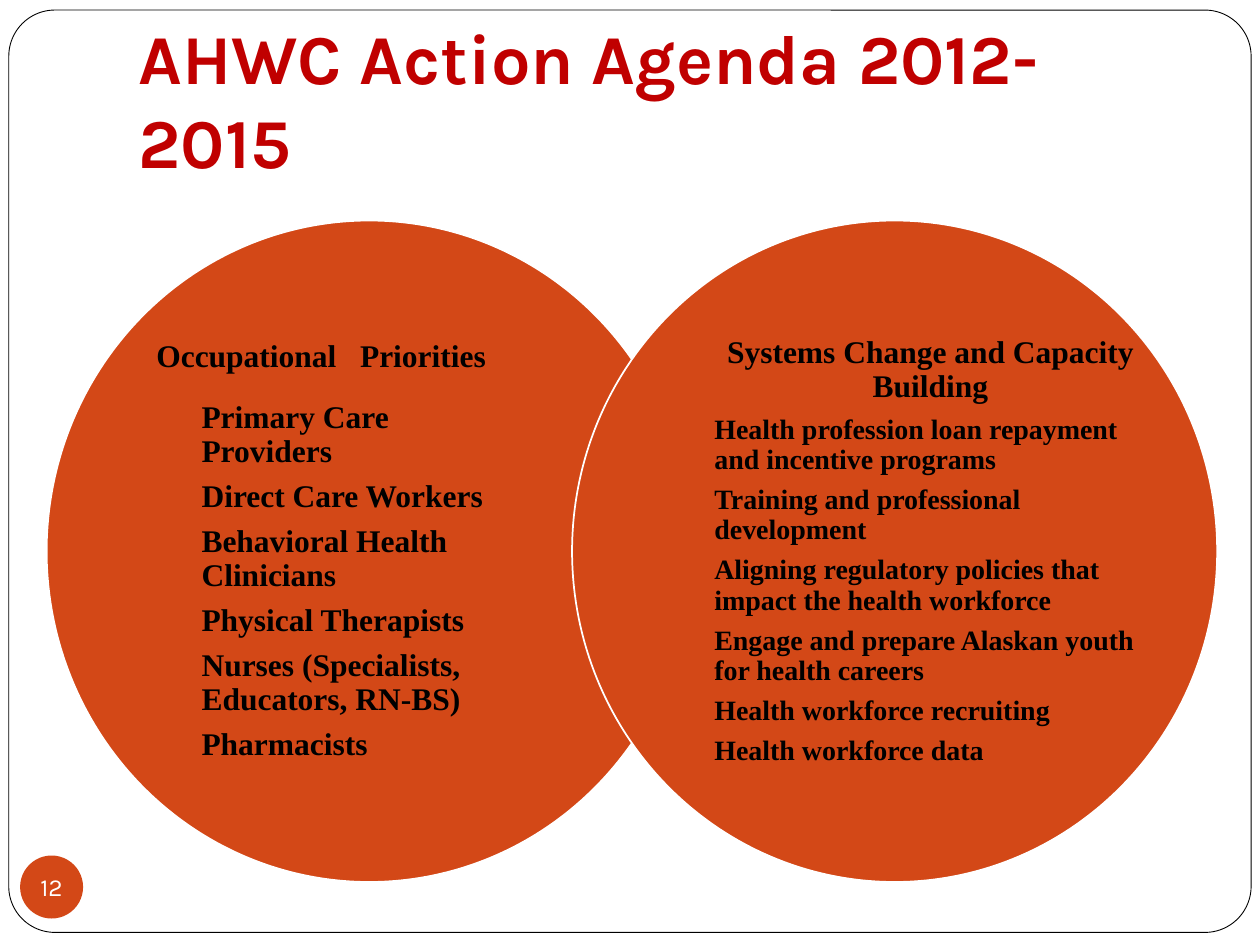
import pptx
import pptx.util
import pptx.dml.color
import pptx.enum.shapes
import pptx.enum.text

Inches = pptx.util.Inches
Pt = pptx.util.Pt
SHAPE = pptx.enum.shapes.MSO_SHAPE
ALIGN = pptx.enum.text.PP_ALIGN
ANCHOR = pptx.enum.text.MSO_ANCHOR


def color(hex_string):
    return pptx.dml.color.RGBColor.from_string(hex_string)


def add_filled(kind, left, top, width, height, fill):
    shape = slide.shapes.add_shape(
        kind, Inches(left), Inches(top), Inches(width), Inches(height))
    shape.shadow.inherit = False
    shape.fill.solid()
    shape.fill.fore_color.rgb = color(fill)
    return shape


deck = pptx.Presentation()
deck.slide_width = Inches(10)
deck.slide_height = Inches(7.5)
slide = deck.slides.add_slide(deck.slide_layouts[5])

frame = add_filled(SHAPE.ROUNDED_RECTANGLE, 0.07, 0.08, 9.86, 7.32, "FFFFFF")
frame.adjustments[0] = 0.05
frame.line.color.rgb = color("000000")
frame.line.width = Pt(0.5)
slide.shapes.element.insert(2, frame.element)

badge = add_filled(SHAPE.OVAL, 0.16, 6.79, 0.5, 0.5, "D34817")
badge.line.fill.background()
number = badge.text_frame
number.word_wrap = False
number.margin_left = number.margin_right = 0
number.margin_top = number.margin_bottom = 0
number.vertical_anchor = ANCHOR.MIDDLE
number.text = "12"
number.paragraphs[0].alignment = ALIGN.CENTER
span = number.paragraphs[0].runs[0]
span.font.size = Pt(14)
span.font.name = "Karla"
span.font.color.rgb = color("FFFFFF")

title = slide.shapes.title
title.left, title.top = Inches(1), Inches(0.3)
title.width, title.height = Inches(8.5), Inches(1.25)
heading = title.text_frame
heading.text = "AHWC Action Agenda 2012-2015"
heading.word_wrap = True
heading.auto_size = pptx.enum.text.MSO_AUTO_SIZE.NONE
heading.vertical_anchor = ANCHOR.BOTTOM
heading.margin_bottom = Inches(0.1)
heading.paragraphs[0].alignment = ALIGN.LEFT
span = heading.paragraphs[0].runs[0]
span.font.size = Pt(40)
span.font.name = "Karla"
span.font.bold = True
span.font.color.rgb = color("C00000")

circles = [
    {
        "left": 0.37, "text_left": 1.1, "text_width": 2.9,
        "heading": "Occupational   Priorities", "heading_gap": 15.5,
        "size": 18, "indent": 0.5,
        "items": [
            "Primary Care Providers",
            "Direct Care Workers",
            "Behavioral Health Clinicians",
            "Physical Therapists",
            "Nurses (Specialists, Educators, RN-BS)",
            "Pharmacists",
        ],
    },
    {
        "left": 4.54, "text_left": 5.67, "text_width": 3.43,
        "heading": "Systems Change and Capacity Building", "heading_gap": 6.3,
        "size": 16, "indent": 0,
        "items": [
            "Health profession loan repayment and incentive programs",
            "Training and professional development",
            "Aligning regulatory policies that impact the health workforce",
            "Engage and prepare Alaskan youth for health careers",
            "Health workforce recruiting",
            "Health workforce data",
        ],
    },
]

for circle in circles:
    disc = add_filled(SHAPE.OVAL, circle["left"], 1.75, 5.12, 5.25, "D34817")
    disc.line.color.rgb = color("FFFFFF")
    disc.line.width = Pt(1)

    box = slide.shapes.add_textbox(
        Inches(circle["text_left"]), Inches(2.35),
        Inches(circle["text_width"]), Inches(4.05))
    text = box.text_frame
    text.word_wrap = True
    text.vertical_anchor = ANCHOR.MIDDLE
    text.margin_left = text.margin_right = 0
    text.margin_top = text.margin_bottom = 0
    text.text = "\n".join([circle["heading"]] + circle["items"])

    for index, para in enumerate(text.paragraphs):
        is_heading = index == 0
        size = 18 if is_heading else circle["size"]
        para.alignment = ALIGN.CENTER if is_heading else ALIGN.LEFT
        para.line_spacing = 0.9
        para.space_after = Pt(circle["heading_gap"] if is_heading else 0.35 * size)
        if not is_heading:
            properties = para.runs[0].font._element.getparent().getparent().get_or_add_pPr()
            properties.set("marL", str(Inches(circle["indent"])))
            properties.set("indent", "0")
        span = para.runs[0]
        span.font.size = Pt(size)
        span.font.name = "Times New Roman"
        span.font.bold = True
        span.font.color.rgb = color("000000")

deck.save("out.pptx")
